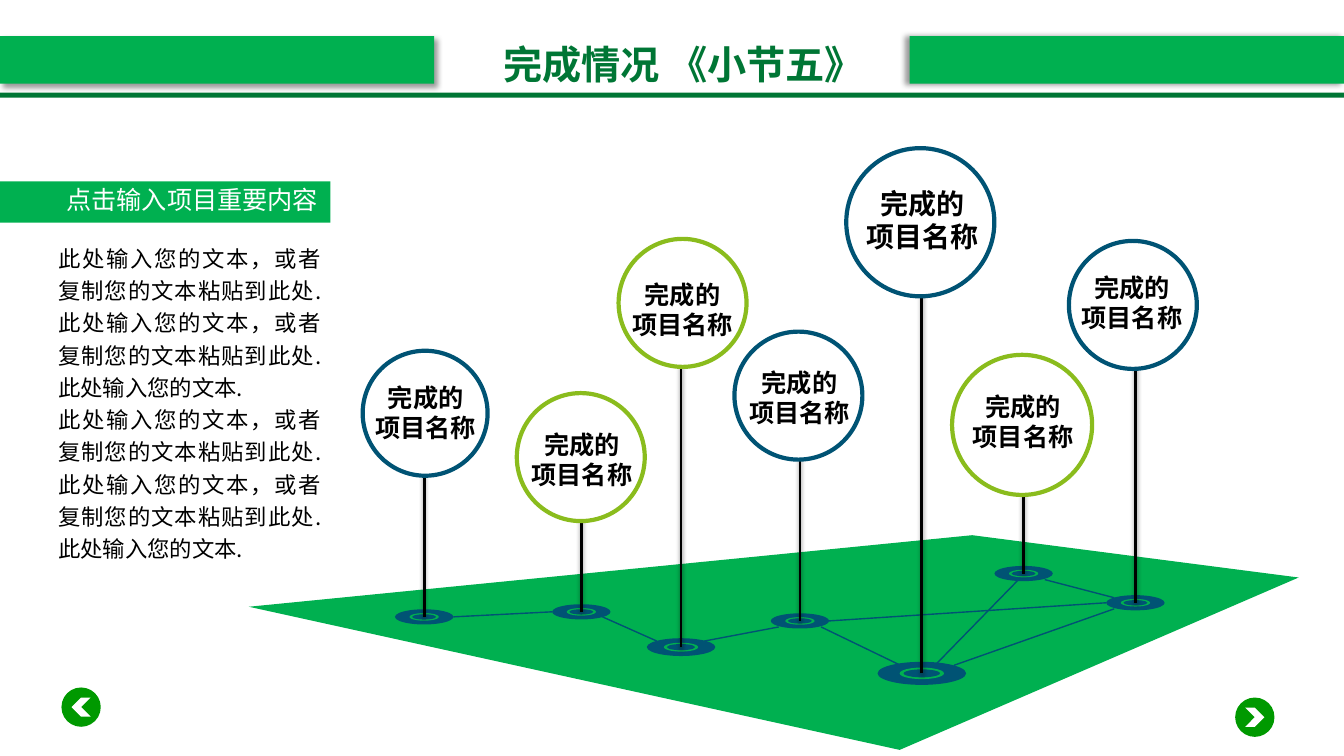
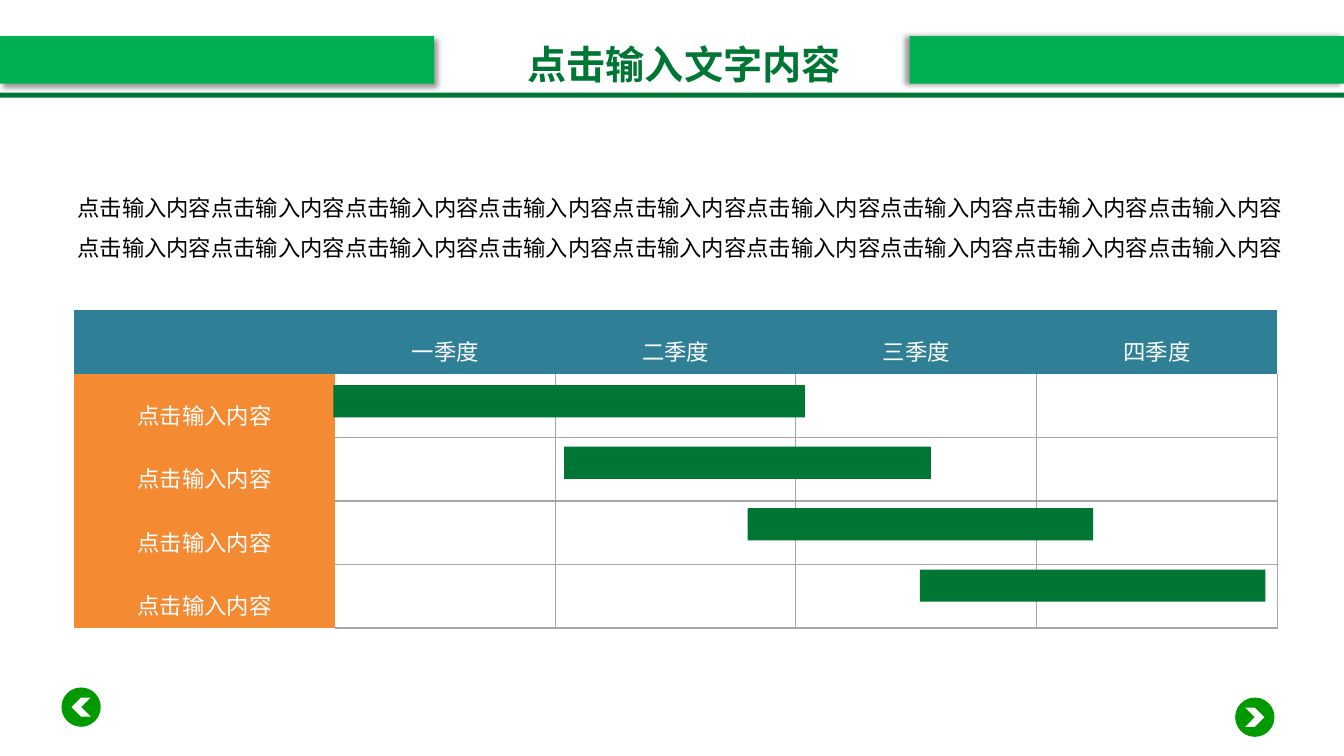
from dataclasses import dataclass

from lxml.etree import SubElement
from pptx import Presentation
from pptx.dml.color import RGBColor
from pptx.enum.shapes import MSO_CONNECTOR, MSO_SHAPE
from pptx.enum.text import MSO_ANCHOR, MSO_AUTO_SIZE, PP_ALIGN
from pptx.oxml.ns import qn
from pptx.util import Inches, Pt

GREEN = "00B050"
DARK_GREEN = "007635"
BUTTON_GREEN = "009900"
LIME = "8ABC1D"
NAVY = "005374"
TEAL = "2F7F97"
ORANGE = "F48A32"
GRID_GRAY = "A6A6A6"
WHITE = "FFFFFF"
BLACK = "000000"
BODY_FONT = "Noto Sans CJK SC"
LABEL_FONT = "Calibri"
PLAIN_STYLE = "{2D5ABB26-0587-4C30-8999-92F81FD0307C}"
SLIDE_WIDTH = 13.34


@dataclass(frozen=True)
class Shadow:
    alpha: int
    blur: float
    distance: float
    angle: int


@dataclass(frozen=True)
class TextStyle:
    size: int
    color: str
    font: str = BODY_FONT
    bold: bool = False
    align: PP_ALIGN = PP_ALIGN.LEFT
    spacing: float = 1.0


@dataclass(frozen=True)
class Pin:
    x: float
    plate_y: float
    plate_width: float
    circle_left: float
    circle_top: float
    diameter: float
    color: str
    label_left: float
    label_top: float
    size: int = 18


@dataclass(frozen=True)
class Link:
    start_x: float
    start_y: float
    end_x: float
    end_y: float


@dataclass(frozen=True)
class Bar:
    left: float
    width: float


TITLE_STYLE = TextStyle(28, DARK_GREEN, bold=True, align=PP_ALIGN.CENTER)
STEM_SHADOW = Shadow(38, 3.1, 1.6, 90)

PINS = [
    Pin(5.77, 6.07, 0.58, 5.13, 3.9, 1.27, LIME, 5.17, 4.21),
    Pin(4.21, 6.12, 0.58, 3.6, 3.48, 1.24, NAVY, 3.62, 3.74),
    Pin(7.94, 6.16, 0.58, 7.29, 3.29, 1.27, NAVY, 7.33, 3.59),
    Pin(11.27, 5.98, 0.58, 10.61, 2.39, 1.27, NAVY, 10.63, 2.65),
    Pin(9.15, 6.68, 0.88, 8.4, 1.47, 1.47, NAVY, 8.5, 1.8, 20),
    Pin(6.76, 6.42, 0.68, 6.14, 2.37, 1.27, LIME, 6.17, 2.72),
    Pin(10.16, 5.69, 0.58, 9.45, 3.52, 1.39, LIME, 9.55, 3.83),
]
LINKS = [
    Link(4.5, 6.12, 5.48, 6.07),
    Link(5.98, 6.12, 6.52, 6.36),
    Link(6.99, 6.36, 7.73, 6.22),
    Link(8.15, 6.22, 9, 6.63),
    Link(9.47, 6.6, 11.06, 6.04),
    Link(11.06, 5.93, 10.37, 5.75),
    Link(8.23, 6.16, 10.98, 5.98),
    Link(9.3, 6.58, 10.1, 5.76),
]
BARS = [Bar(3.31, 4.68), Bar(5.6, 3.64), Bar(7.42, 3.43), Bar(9.13, 3.43)]
FLOOR = [(2.47, 6.02), (9.65, 5.31), (12.89, 5.73), (8.93, 7.44)]


def rgb(color: str) -> RGBColor:
    return RGBColor.from_string(color)


def add_shadow(effects, shadow: Shadow) -> None:
    outer = SubElement(effects, qn("a:outerShdw"), blurRad=str(Pt(shadow.blur)),
                       dist=str(Pt(shadow.distance)), dir=str(shadow.angle * 60000),
                       algn="ctr", rotWithShape="0")
    color = SubElement(outer, qn("a:srgbClr"), val=BLACK)
    SubElement(color, qn("a:alpha"), val=str(shadow.alpha * 1000))


def paint(shape, fill: str, outline: str | None = None, shadow: Shadow | None = None) -> None:
    shape.fill.solid()
    shape.fill.fore_color.rgb = rgb(fill)
    if outline:
        shape.line.color.rgb = rgb(outline)
        shape.line.width = Pt(3)
    else:
        shape.line.fill.background()
    shape.shadow.inherit = False
    if shadow:
        add_shadow(shape.element.spPr.find(qn("a:effectLst")), shadow)


def add_shape(page, kind: MSO_SHAPE, left: float, top: float, width: float, height: float,
              fill: str, outline: str | None = None, shadow: Shadow | None = None):
    shape = page.shapes.add_shape(kind, Inches(left), Inches(top), Inches(width), Inches(height))
    paint(shape, fill, outline, shadow)
    return shape


def add_line(page, link: Link, color: str, width: float, shadow: Shadow | None = None) -> None:
    line = page.shapes.add_connector(MSO_CONNECTOR.STRAIGHT, Inches(link.start_x), Inches(link.start_y),
                                     Inches(link.end_x), Inches(link.end_y))
    line.line.color.rgb = rgb(color)
    line.line.width = Pt(width)
    effects = SubElement(line.element.spPr, qn("a:effectLst"))
    if shadow:
        add_shadow(effects, shadow)


def write(text_frame, lines: list[str], style: TextStyle) -> None:
    text_frame.text = "\n".join(lines)
    for para in text_frame.paragraphs:
        para.alignment = style.align
        para.line_spacing = style.spacing
        for span in para.runs:
            span.font.size = Pt(style.size)
            span.font.bold = style.bold
            span.font.color.rgb = rgb(style.color)
            span.font.name = style.font
            properties = span.font._element
            properties.set("lang", "zh-CN")
            SubElement(properties, qn("a:ea"), typeface=LABEL_FONT)


def add_text(page, left: float, top: float, width: float, height: float,
             lines: list[str], style: TextStyle, wrap: bool = False) -> None:
    box = page.shapes.add_textbox(Inches(left), Inches(top), Inches(width), Inches(height))
    box.text_frame.word_wrap = wrap
    write(box.text_frame, lines, style)


def add_button(page, left: float, top: float, rotation: int) -> None:
    add_shape(page, MSO_SHAPE.OVAL, left, top, 0.39, 0.39, BUTTON_GREEN)
    chevron = add_shape(page, MSO_SHAPE.CHEVRON, left + 0.1, top + 0.1, 0.19, 0.19, WHITE)
    chevron.rotation = rotation


def build_frame(deck, layout) -> None:
    for placeholder in list(layout.placeholders)[1:]:
        placeholder.element.getparent().remove(placeholder.element)
    page = deck.slides[0]
    existing = len(page.shapes)
    band_width = 4.31
    for left, angle in ((0, 45), (SLIDE_WIDTH - band_width, 180)):
        add_shape(page, MSO_SHAPE.RECTANGLE, left, 0.36, band_width, 0.47, GREEN,
                  shadow=Shadow(40, 4, 3, angle))
    add_shape(page, MSO_SHAPE.RECTANGLE, 0, 0.92, SLIDE_WIDTH, 0.05, DARK_GREEN)
    add_button(page, 0.61, 6.82, 180)
    add_button(page, 12.26, 6.92, 0)
    for shape in list(page.shapes)[existing:]:
        layout.shapes.element.append(shape.element)


def set_title(page, text: str, left: float, width: float) -> None:
    title = page.shapes.title
    title.left, title.top = Inches(left), Inches(0.35)
    title.width, title.height = Inches(width), Inches(0.57)
    title.text_frame.word_wrap = False
    title.text_frame.auto_size = MSO_AUTO_SIZE.NONE
    title.text_frame.vertical_anchor = MSO_ANCHOR.TOP
    write(title.text_frame, [text], TITLE_STYLE)


def add_plate(page, pin: Pin) -> None:
    width = pin.plate_width
    for across, down, color in ((1, 0.26, NAVY), (0.5, 0.13, GREEN), (0.41, 0.09, NAVY)):
        add_shape(page, MSO_SHAPE.OVAL, pin.x - width * across / 2, pin.plate_y - width * down / 2,
                  width * across, width * down, color)


def add_pin(page, pin: Pin) -> None:
    middle = pin.circle_top + pin.diameter / 2
    add_line(page, Link(pin.x, pin.plate_y, pin.x, middle), BLACK, 2, STEM_SHADOW)
    add_shape(page, MSO_SHAPE.OVAL, pin.circle_left, pin.circle_top, pin.diameter, pin.diameter,
              WHITE, pin.color)
    width, height = (1.21, 0.71) if pin.size == 18 else (1.32, 0.77)
    add_text(page, pin.label_left, pin.label_top, width, height, ["完成的", "项目名称"],
             TextStyle(pin.size, BLACK, LABEL_FONT, True, PP_ALIGN.CENTER))


def build_progress(page) -> None:
    set_title(page, "完成情况 《小节五》", 4.86, 3.85)
    corners = [(Inches(x), Inches(y)) for x, y in FLOOR]
    outline = page.shapes.build_freeform(*corners[0])
    outline.add_line_segments(corners[1:], close=True)
    paint(outline.convert_to_shape(), GREEN)
    for pin in PINS:
        add_plate(page, pin)
    for link in LINKS:
        add_line(page, link, NAVY, 1)
    for pin in PINS:
        add_pin(page, pin)
    sentence = "此处输入您的文本，或者复制您的文本粘贴到此处."
    body = sentence * 2 + "此处输入您的文本."
    add_text(page, 0.48, 2.33, 2.81, 3.33, [body, body],
             TextStyle(16, BLACK, align=PP_ALIGN.JUSTIFY, spacing=1.2), wrap=True)
    add_shape(page, MSO_SHAPE.RECTANGLE, 0, 1.8, 3.28, 0.41, GREEN)
    add_text(page, 0.56, 1.78, 2.73, 0.4, ["点击输入项目重要内容"], TextStyle(18, WHITE))


def add_borders(cell, sides: list[str]) -> None:
    properties = cell._tc.get_or_add_tcPr()
    for side in sides:
        border = SubElement(properties, qn(f"a:ln{side}"), w=str(Pt(1)))
        fill = SubElement(border, qn("a:solidFill"))
        SubElement(fill, qn("a:srgbClr"), val=GRID_GRAY)


def format_cell(cell, row: int, column: int, text: str) -> None:
    if row and column:
        shown = {"L": column > 1, "R": True, "T": row > 1, "B": True}
        add_borders(cell, [side for side, visible in shown.items() if visible])
    cell.fill.solid()
    cell.fill.fore_color.rgb = rgb(TEAL if row == 0 else ORANGE if column == 0 else WHITE)
    cell.margin_left = cell.margin_right = Inches(0.15)
    cell.margin_top = cell.margin_bottom = Inches(0.07)
    cell.vertical_anchor = MSO_ANCHOR.BOTTOM
    if text:
        write(cell.text_frame, [text], TextStyle(16, WHITE, align=PP_ALIGN.CENTER, spacing=1.5))


def add_schedule(page) -> None:
    quarters = ["", "一季度", "二季度", "三季度", "四季度"]
    widths = [2.6, 2.18, 2.39, 2.39, 2.39]
    row_height = 0.63
    rows = len(BARS) + 1
    frame = page.shapes.add_table(rows, len(widths), Inches(0.73), Inches(3.08),
                                  Inches(sum(widths)), Inches(row_height * rows))
    table = frame.table
    table.first_row = table.horz_banding = False
    table._tbl.tblPr.find(qn("a:tableStyleId")).text = PLAIN_STYLE
    for column, width in enumerate(widths):
        table.columns[column].width = Inches(width)
    for row in range(rows):
        table.rows[row].height = Inches(row_height)
        texts = quarters if row == 0 else ["点击输入内容"] + [""] * (len(widths) - 1)
        for column, text in enumerate(texts):
            format_cell(table.cell(row, column), row, column, text)


def build_schedule(page) -> None:
    set_title(page, "点击输入文字内容", 5.12, 3.34)
    add_schedule(page)
    add_text(page, 0.67, 1.74, 12.22, 0.91, ["点击输入内容" * 9] * 2,
             TextStyle(16, BLACK, spacing=1.5), wrap=True)
    for index, bar in enumerate(BARS):
        add_shape(page, MSO_SHAPE.RECTANGLE, bar.left, 3.82 + 0.61 * index, bar.width, 0.32, DARK_GREEN)


def main() -> None:
    deck = Presentation()
    deck.slide_width, deck.slide_height = Inches(SLIDE_WIDTH), Inches(7.5)
    layout = deck.slide_layouts[5]
    progress = deck.slides.add_slide(layout)
    build_frame(deck, layout)
    build_progress(progress)
    build_schedule(deck.slides.add_slide(layout))
    deck.save("out.pptx")


if __name__ == "__main__":
    main()
